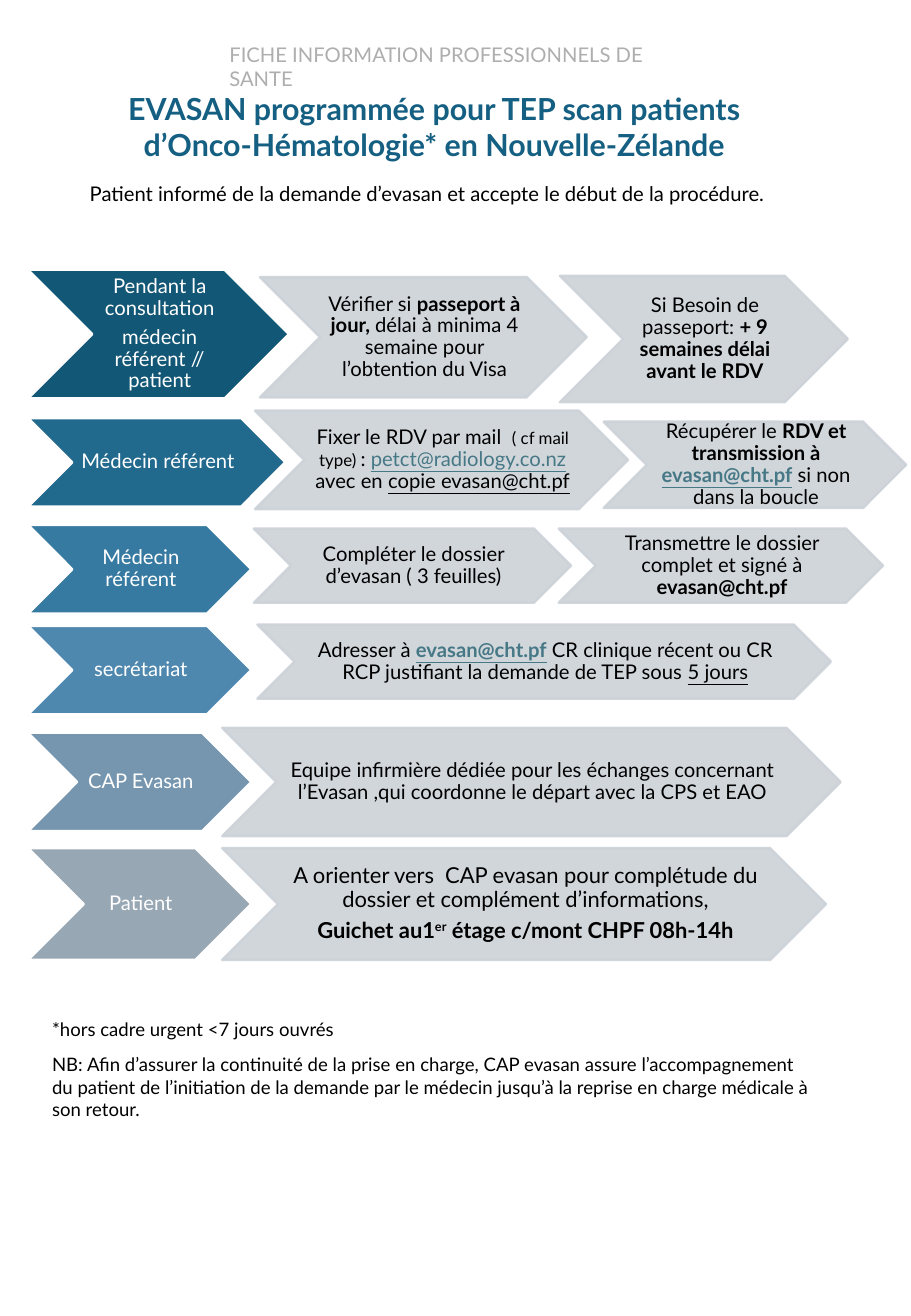
"""Build the one-page sheet on planned medical evacuations for PET scans."""
import pptx
import pptx.util
import pptx.dml.color
import pptx.enum.shapes
import pptx.enum.text
import pptx.oxml
import pptx.oxml.ns

PX = 9144
BLACK, WHITE, GREY, LINK = "000000", "FFFFFF", "CCD2D8", "467886"
CENTER = pptx.enum.text.PP_ALIGN.CENTER


def rgb(value):
    return pptx.dml.color.RGBColor.from_string(value)


def write(paragraph, text, size=12, color=BLACK, bold=False, underline=False, baseline=0):
    run = paragraph.add_run()
    run.text = text
    run.font.name = "Lato"
    run.font.size = pptx.util.Pt(size)
    run.font.color.rgb = rgb(color)
    run.font.bold = bold
    run.font.underline = underline
    if baseline:
        run.font._element.set("baseline", str(baseline * 1000))


prs = pptx.Presentation()
prs.slide_width, prs.slide_height = 750 * PX, 1083 * PX
slide = prs.slides.add_slide(prs.slide_layouts[5])

title = slide.shapes.title
title.left, title.top, title.width, title.height = [v * PX for v in (61, 69, 593, 71)]
title.text_frame.auto_size = pptx.enum.text.MSO_AUTO_SIZE.NONE
title.text_frame.vertical_anchor = pptx.enum.text.MSO_ANCHOR.TOP
title.text_frame.paragraphs[0].alignment = CENTER
write(title.text_frame.paragraphs[0],
      "EVASAN programmée pour TEP scan patients d’Onco-Hématologie* en Nouvelle-Zélande",
      size=18, color="156082", bold=True)

notes = [
    ((179, 30, 393, 30), "FICHE INFORMATION PROFESSIONNELS DE SANTE", dict(color="AEAEAE")),
    ((64, 144, 631, 30),
     "Patient informé de la demande d’evasan et accepte le début de la procédure.", {}),
    ((33, 833, 649, 29), "*hors cadre urgent <7 jours ouvrés", dict(size=11)),
    ((33, 862, 649, 66),
     "NB: Afin d’assurer la continuité de la prise en charge, CAP evasan assure "
     "l’accompagnement du patient de l’initiation de la demande par le médecin jusqu’à "
     "la reprise en charge médicale à son retour.", dict(size=11)),
]
for place, text, style in notes:
    note = slide.shapes.add_textbox(*[v * PX for v in place])
    note.text_frame.word_wrap = True
    write(note.text_frame.paragraphs[0], text, **style)

strong = dict(bold=True)
under = dict(underline=True)
link = dict(color=LINK, underline=True)
strong_link = dict(link, bold=True)
large = dict(size=13)
large_strong = dict(size=13, bold=True)

actors = [
    ("135776", (222, 215, 106), ["Pendant la consultation", "médecin référent // patient"]),
    ("22698E", (344, 212, 73), ["Médecin référent"]),
    ("3679A1", (432, 184, 73), ["Médecin référent"]),
    ("4F88AF", (515, 184, 73), ["secrétariat"]),
    ("7696AF", (603, 184, 81), ["CAP Evasan"]),
    ("98A7B4", (698, 184, 92), ["Patient"]),
]
actions = [
    ((214, 228, 269, 99), [[
        ("Vérifier si ", {}), ("passeport à jour, ", strong),
        ("délai à minima 4 semaine pour l’obtention du Visa", {})]]),
    ((461, 227, 237, 104), [[
        ("Si Besoin de passeport: ", {}), ("+ 9 semaines délai avant le RDV", strong)]]),
    ((210, 338, 307, 81), [[
        ("Fixer le RDV par mail  ", {}), ("( cf mail type) ", dict(size=10)), (": ", {}),
        ("petct@radiology.co.nz", link), (" avec en ", {}), ("copie evasan@cht.pf", under)]]),
    ((497, 347, 249, 71), [[
        ("Récupérer le ", {}), ("RDV et transmission à ", strong),
        ("evasan@cht.pf", strong_link), (" si non dans la boucle", {})]]),
    ((209, 435, 261, 61), [[("Compléter le dossier d’evasan ( 3 feuilles)", {})]]),
    ((460, 435, 267, 61), [[
        ("Transmettre le dossier complet et signé à ", {}), ("evasan@cht.pf", strong)]]),
    ((212, 514, 472, 61), [[
        ("Adresser à ", {}), ("evasan@cht.pf", strong_link),
        (" CR clinique récent ou CR RCP justifiant la demande de TEP sous ", {}),
        ("5 jours", under)]]),
    ((183, 599, 509, 89), [[
        ("Equipe infirmière dédiée pour les échanges concernant l’Evasan ,qui coordonne "
         "le départ avec la CPS et EAO", {})]]),
    ((183, 698, 497, 92), [
        [("A orienter vers  CAP evasan pour complétude du dossier et complément "
          "d’informations,", large)],
        [("Guichet au1", large_strong), ("er", dict(large_strong, baseline=30)),
         (" étage c/mont CHPF 08h-14h", large_strong)]]),
]

steps = [((23, top, width, height), fill, WHITE,
          [[(line, dict(color=WHITE))] for line in lines])
         for fill, (top, width, height), lines in actors]
steps += [(place, GREY, GREY, paragraphs) for place, paragraphs in actions]

for place, fill, outline, paragraphs in steps:
    step = slide.shapes.add_shape(pptx.enum.shapes.MSO_SHAPE.CHEVRON, *[v * PX for v in place])
    step.shadow.inherit = False
    step.fill.solid()
    step.fill.fore_color.rgb = rgb(fill)
    step.line.color.rgb = rgb(outline)
    step.line.width = pptx.util.Pt(1.5)
    if fill == GREY:
        for tint in step._element.spPr.iter(pptx.oxml.ns.qn("a:srgbClr")):
            tint.append(pptx.oxml.parse_xml(
                f'<a:alpha {pptx.oxml.ns.nsdecls("a")} val="90000"/>'))
    frame = step.text_frame
    frame.word_wrap = True
    frame.vertical_anchor = pptx.enum.text.MSO_ANCHOR.MIDDLE
    frame.margin_left, frame.margin_right = 2 * PX, 0
    frame.margin_top = frame.margin_bottom = PX
    for index, runs in enumerate(paragraphs):
        paragraph = frame.add_paragraph() if index else frame.paragraphs[0]
        paragraph.alignment = CENTER
        paragraph.line_spacing = 0.9
        paragraph.space_after = pptx.util.Pt(4.2)
        for text, style in runs:
            write(paragraph, text, **style)

prs.save("out.pptx")
